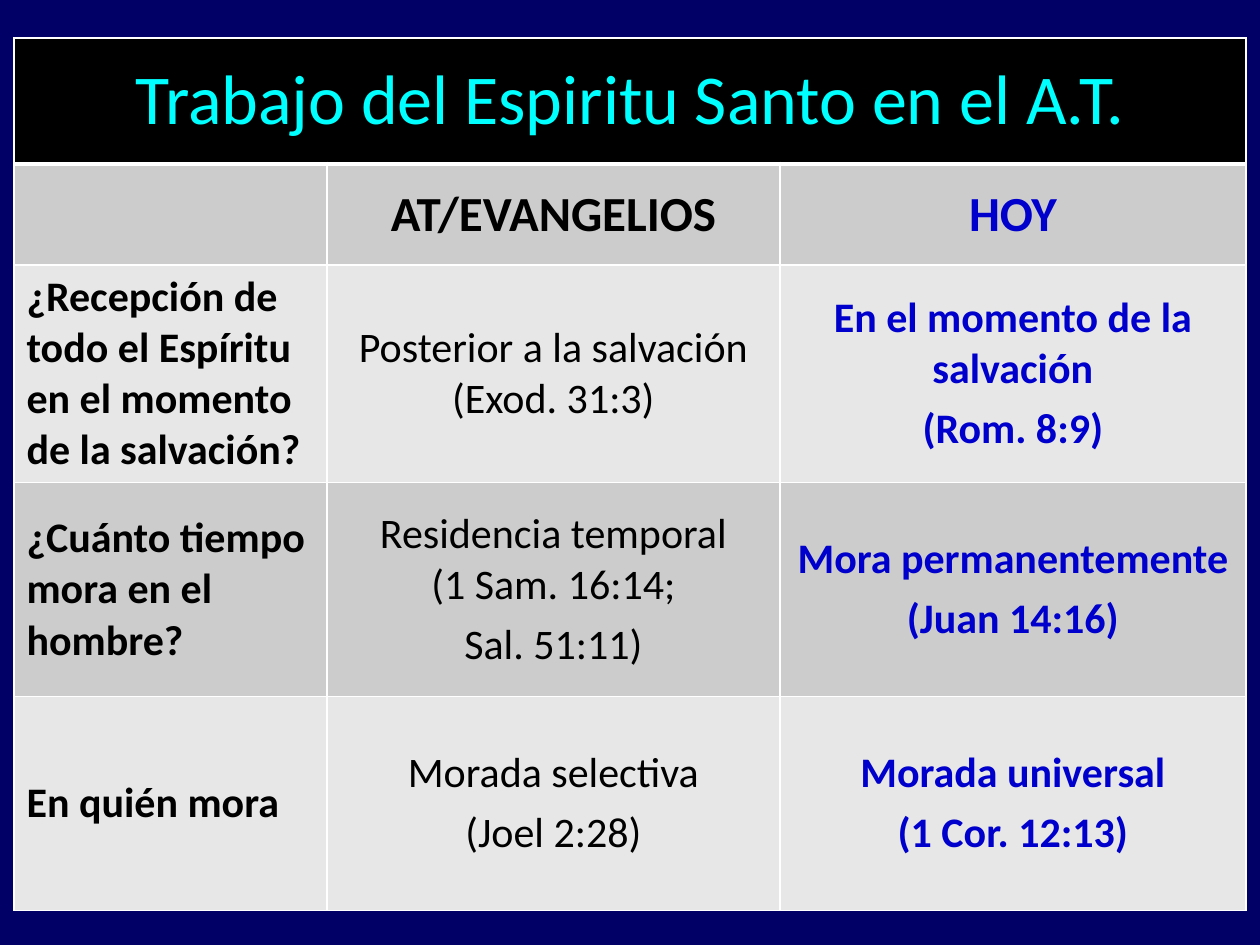
from lxml.etree import SubElement
from pptx import Presentation
from pptx.dml.color import RGBColor as RGB
from pptx.enum.text import MSO_ANCHOR as Anchor, PP_ALIGN as Align
from pptx.oxml.ns import qn
from pptx.util import Emu, Pt

COLORS = {
    "background": "000066", "banner": "000000", "title": "00FFFF",
    "dark_band": "CCCCCC", "light_band": "E7E7E7", "border": "FFFFFF",
    "text": "000000", "today": "0000CC",
}
TITLE = "Trabajo del Espiritu Santo en el A.T."
HEADINGS = [[], ["AT/EVANGELIOS"], ["HOY"]]
COMPARISONS = [
    [["¿Recepción de todo el Espíritu en el momento de la salvación?"],
     ["Posterior a la salvación (Exod. 31:3)"],
     ["En el momento de la salvación", "(Rom. 8:9)"]],
    [["¿Cuánto tiempo mora en el hombre?"],
     ["Residencia temporal\n(1 Sam. 16:14;", "Sal. 51:11)"],
     ["Mora permanentemente", "(Juan 14:16)"]],
    [["En quién mora"],
     ["Morada selectiva", "(Joel 2:28)"],
     ["Morada universal", "(1 Cor. 12:13)"]],
]
COLUMN_WIDTHS = [313, 453, 466]
ROW_HEIGHTS = [126, 101, 214, 214, 214]
LEFT, TOP = 14, 38
SLIDE_WIDTH, SLIDE_HEIGHT = 1260, 945


def px(length):
    return Emu(round(length * 914400 / 126))


def color(key):
    return RGB.from_string(COLORS[key])


def add_borders(cell, bottom_width):
    properties = cell._tc.get_or_add_tcPr()
    for index, (side, width) in enumerate(
            [("lnL", 1), ("lnR", 1), ("lnT", 1), ("lnB", bottom_width)]):
        line = properties.makeelement(qn(f"a:{side}"), {"w": str(Pt(width))})
        fill = SubElement(line, qn("a:solidFill"))
        SubElement(fill, qn("a:srgbClr"), val=COLORS["border"])
        properties.insert(index, line)


def fill_cell(cell, paragraphs, band, font, align=Align.CENTER, bottom_width=1):
    cell.vertical_anchor = Anchor.MIDDLE
    cell.fill.solid()
    cell.fill.fore_color.rgb = color(band)
    add_borders(cell, bottom_width)
    for index, wording in enumerate(paragraphs):
        frame = cell.text_frame
        paragraph = frame.add_paragraph() if index else frame.paragraphs[0]
        paragraph.text = wording
        paragraph.alignment = align
        if index:
            paragraph.space_before = Pt(5)
        for run in paragraph.runs:
            run.font.color.rgb = color(font["color"])
            for name in ("name", "size", "bold"):
                setattr(run.font, name, font[name])


def font_of(size, bold, key):
    return {"name": "Calibri", "size": Pt(size), "bold": bold, "color": key}


def main():
    deck = Presentation()
    deck.slide_width, deck.slide_height = px(SLIDE_WIDTH), px(SLIDE_HEIGHT)
    slide = deck.slides.add_slide(deck.slide_layouts[6])
    slide.background.fill.solid()
    slide.background.fill.fore_color.rgb = color("background")

    comparison = slide.shapes.add_table(
        len(ROW_HEIGHTS), len(COLUMN_WIDTHS), px(LEFT), px(TOP),
        px(sum(COLUMN_WIDTHS)), px(sum(ROW_HEIGHTS))).table
    for column, width in zip(comparison.columns, COLUMN_WIDTHS):
        column.width = px(width)
    for row, height in zip(comparison.rows, ROW_HEIGHTS):
        row.height = px(height)

    banner = comparison.cell(0, 0)
    banner.merge(comparison.cell(0, len(COLUMN_WIDTHS) - 1))
    fill_cell(banner, [TITLE], "banner", font_of(40, False, "title"), bottom_width=3)

    for row, entries in enumerate([HEADINGS] + COMPARISONS, 1):
        heading = row == 1
        band = "dark_band" if row % 2 else "light_band"
        for column, paragraphs in enumerate(entries):
            font = font_of(28 if heading else 24, heading or column != 1,
                           "today" if column == 2 else "text")
            fill_cell(comparison.cell(row, column), paragraphs, band, font,
                      Align.CENTER if column else Align.LEFT)

    deck.save("out.pptx")


if __name__ == "__main__":
    main()
